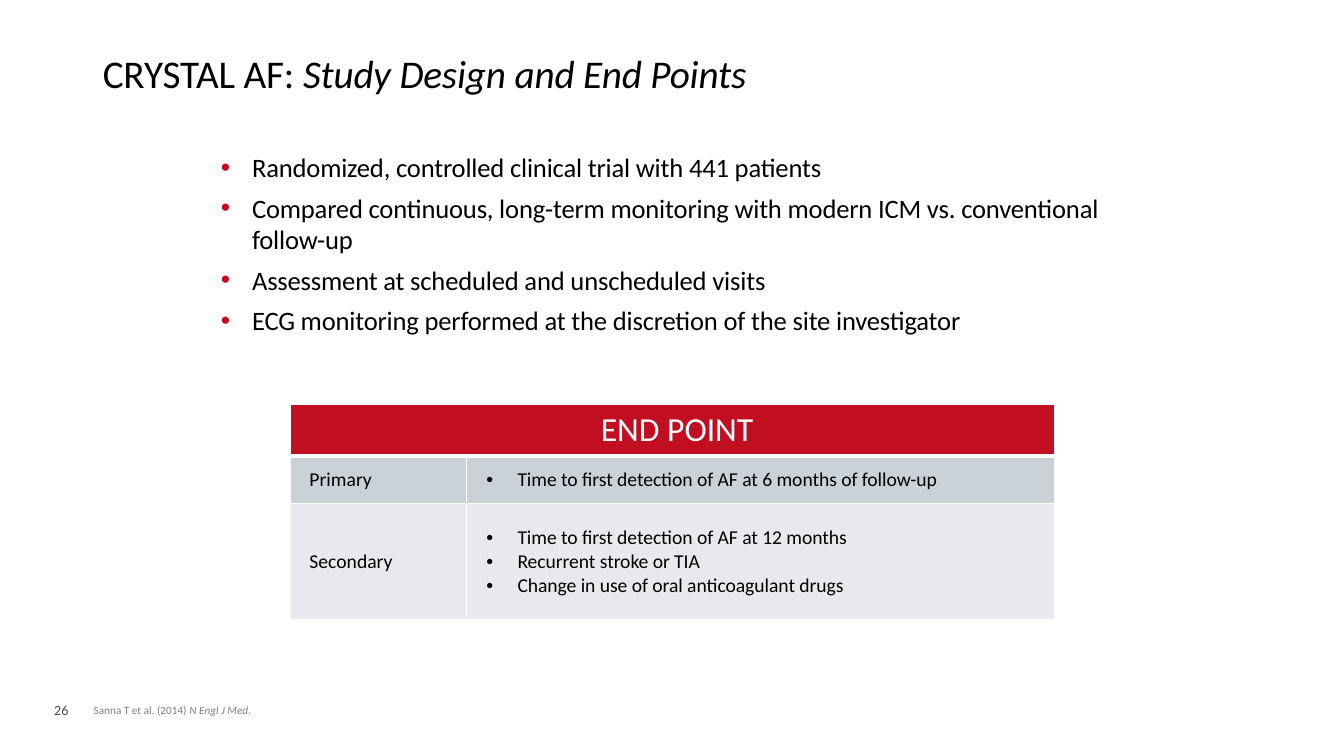
import collections
import pptx
import pptx.dml.color
import pptx.enum.text
import pptx.oxml
import pptx.oxml.ns
import pptx.util

COLORS = {"red": "C10E20", "white": "FFFFFF", "black": "000000", "number": "4D4D4F",
          "citation": "808080", "primary": "CAD1D7", "secondary": "E7E9EC"}
FONT = "Calibri"
WIDTH, HEIGHT = pptx.util.Inches(13.33), pptx.util.Inches(7.5)
COLUMN, ROW = WIDTH / 100, HEIGHT / 100
NAMESPACE = pptx.oxml.ns.nsdecls("a")
ALIGN = pptx.enum.text.PP_ALIGN
ANCHOR = pptx.enum.text.MSO_ANCHOR

Box = collections.namedtuple("Box", "column row columns rows")
TITLE_BOX = Box(6.9, 5.33, 86.27, 8.13)
DESIGN_BOX = Box(15.53, 19.33, 68.94, 26.8)
ENDPOINT_BOX = Box(21.6, 53.47, 56.88, 28.53)
NUMBER_BOX = Box(3.3, 92.13, 2.93, 3.6)
CITATION_BOX = Box(6.9, 93.07, 70.37, 1.73)

DESIGN_POINTS = [
    "Randomized, controlled clinical trial with 441 patients",
    "Compared continuous, long-term monitoring with modern ICM vs. conventional follow-up",
    "Assessment at scheduled and unscheduled visits",
    "ECG monitoring performed at the discretion of the site investigator",
]
END_POINTS = [
    ("Primary", "primary", ["Time to first detection of AF at 6 months of follow-up"]),
    ("Secondary", "secondary", ["Time to first detection of AF at 12 months",
                                "Recurrent stroke or TIA",
                                "Change in use of oral anticoagulant drugs"]),
]


def rgb(name):
    """Return the named colour."""
    return pptx.dml.color.RGBColor.from_string(COLORS[name])


def extent(box):
    """Turn a grid box into left, top, width and height."""
    return [round(length) for length in (box.column * COLUMN, box.row * ROW,
                                         box.columns * COLUMN, box.rows * ROW)]


def place(placeholder, box):
    """Move a placeholder to a grid box."""
    placeholder.left, placeholder.top, placeholder.width, placeholder.height = extent(box)


def write(paragraph, text, size, color="black", italic=False, spacing=0):
    """Add a formatted run to a paragraph."""
    run = paragraph.add_run()
    run.text = text
    run.font.name, run.font.size = FONT, pptx.util.Pt(size)
    run.font.bold, run.font.italic = False, italic
    run.font.color.rgb = rgb(color)
    if spacing:
        run._r.get_or_add_rPr().set("spc", str(round(spacing * 100)))


def indent(paragraph, margin, hanging=0):
    """Set the left margin and first-line indent in inches."""
    properties = paragraph._p.get_or_add_pPr()
    properties.set("marL", str(pptx.util.Inches(margin)))
    properties.set("indent", str(pptx.util.Inches(hanging)))
    return properties


def write_list(frame, points, size, margin, color, before, spacing):
    """Write bulleted paragraphs into a text frame."""
    for index, point in enumerate(points):
        paragraph = frame.add_paragraph() if index else frame.paragraphs[0]
        properties = indent(paragraph, margin, -0.31)
        for element in (f'<a:buClr {NAMESPACE}><a:srgbClr val="{COLORS[color]}"/></a:buClr>',
                        f'<a:buFont {NAMESPACE} typeface="Arial"/>',
                        f'<a:buChar {NAMESPACE} char="•"/>'):
            properties.append(pptx.oxml.parse_xml(element))
        paragraph.space_before = pptx.util.Pt(before if index else 0)
        write(paragraph, point, size, spacing=spacing)


def add_title(slide, box):
    """Fill the title placeholder."""
    place(slide.shapes.title, box)
    frame = slide.shapes.title.text_frame
    frame.auto_size = pptx.enum.text.MSO_AUTO_SIZE.NONE
    frame.vertical_anchor = ANCHOR.BOTTOM
    heading = frame.paragraphs[0]
    heading.alignment, heading.line_spacing = ALIGN.LEFT, 0.9
    write(heading, "CRYSTAL AF: ", 28, spacing=-0.1)
    write(heading, "Study Design and End Points", 28, italic=True, spacing=-0.1)


def add_design(slide, box):
    """Fill the body placeholder with the study design."""
    design = slide.placeholders[1]
    place(design, box)
    design.text_frame.auto_size = pptx.enum.text.MSO_AUTO_SIZE.NONE
    write_list(design.text_frame, DESIGN_POINTS, 19, 0.33, "red", 6, -0.1)


def style_cell(cell, color, top=1, bottom=1):
    """Give a cell white borders, a fill and a middle anchor."""
    properties = cell._tc.get_or_add_tcPr()
    for side, points in (("L", 1), ("R", 1), ("T", top), ("B", bottom)):
        properties.append(pptx.oxml.parse_xml(
            f'<a:ln{side} {NAMESPACE} w="{pptx.util.Pt(points)}"><a:solidFill>'
            f'<a:srgbClr val="{COLORS["white"]}"/></a:solidFill></a:ln{side}>'))
    cell.fill.solid()
    cell.fill.fore_color.rgb = rgb(color)
    cell.vertical_anchor = ANCHOR.MIDDLE


def add_end_points(slide, box):
    """Add the end point table."""
    left, top, width, height = extent(box)
    table = slide.shapes.add_table(3, 2, left, top, width, height).table
    for column, share in zip(table.columns, (0.23, 0.77)):
        column.width = round(width * share)
    for row, share in zip(table.rows, (0.24, 0.22, 0.54)):
        row.height = round(height * share)

    for cell in table.rows[0].cells:
        style_cell(cell, "red", bottom=3)
    header = table.cell(0, 0)
    header.merge(table.cell(0, 1))
    caption = header.text_frame.paragraphs[0]
    indent(caption, 0.09)
    caption.alignment = ALIGN.CENTER
    write(caption, "END POINT", 24, "white")

    for number, (name, color, points) in enumerate(END_POINTS, 1):
        label, details = table.cell(number, 0), table.cell(number, 1)
        for cell in (label, details):
            style_cell(cell, color, top=3 if number == 1 else 1)
        indent(label.text_frame.paragraphs[0], 0.09)
        write(label.text_frame.paragraphs[0], name, 14)
        write_list(details.text_frame, points, 14, 0.41, "black", 0, -0.05)


def add_number(slide, box):
    """Add the slide number."""
    number = slide.shapes.add_textbox(*extent(box)).text_frame
    write(number.paragraphs[0], "26", 10, "number")


def add_citation(slide, box):
    """Add the source citation."""
    citation = slide.shapes.add_textbox(*extent(box)).text_frame
    citation.word_wrap = True
    citation.margin_left = citation.margin_right = 0
    citation.margin_top = citation.margin_bottom = 0
    reference = citation.paragraphs[0]
    indent(reference, 0.01)
    for text, italic in (("Sanna T et al. (2014) ", False), ("N Engl J Med", True), (".", False)):
        write(reference, text, 8, "citation", italic=italic)


def main():
    """Build and save the slide."""
    presentation = pptx.Presentation()
    presentation.slide_width, presentation.slide_height = WIDTH, HEIGHT
    slide = presentation.slides.add_slide(presentation.slide_layouts[1])
    add_number(slide, NUMBER_BOX)
    add_title(slide, TITLE_BOX)
    add_design(slide, DESIGN_BOX)
    add_end_points(slide, ENDPOINT_BOX)
    add_citation(slide, CITATION_BOX)
    presentation.save("out.pptx")


if __name__ == "__main__":
    main()
